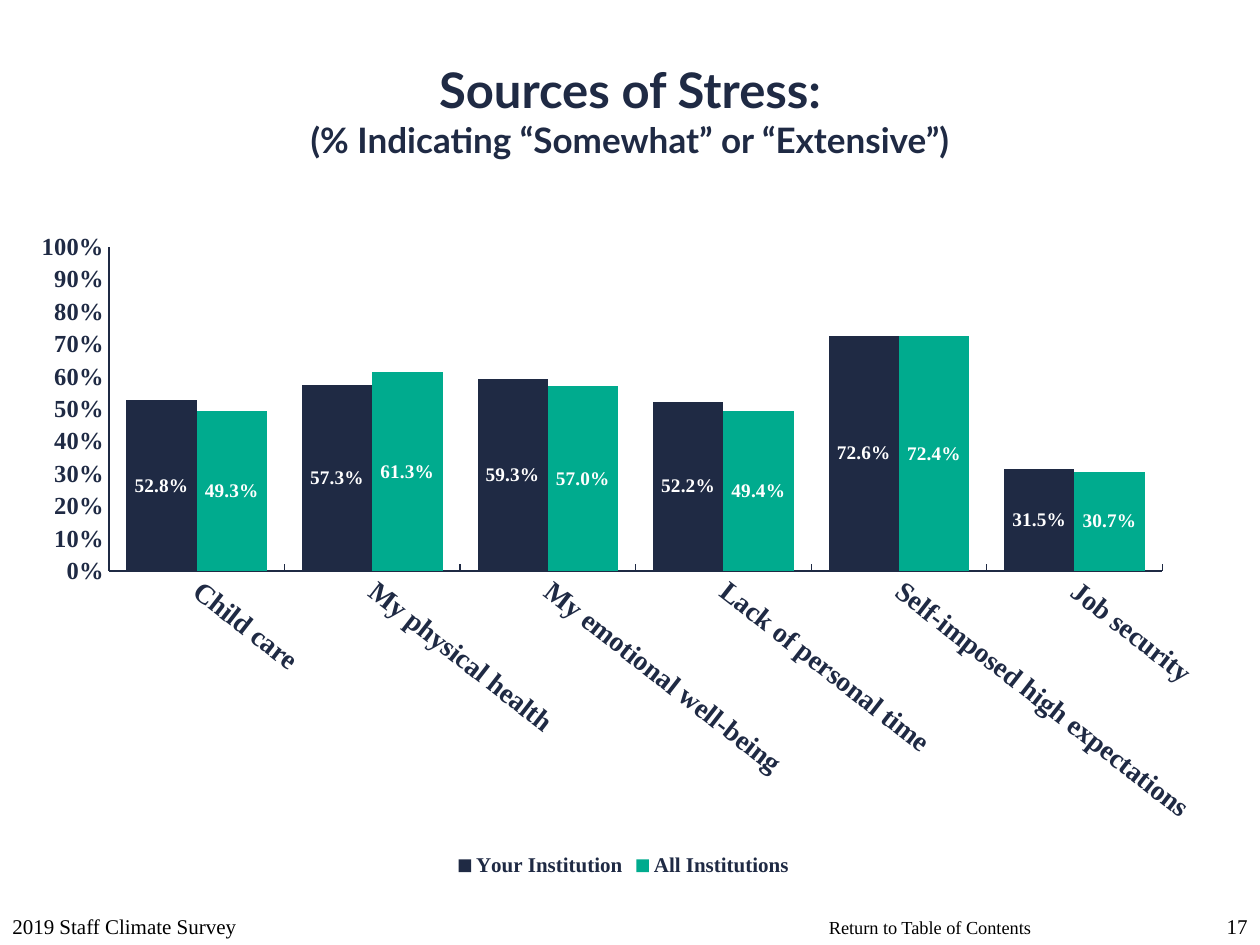
"""Build the slide on sources of stress, with a clustered column chart."""
from lxml import etree
from pptx import Presentation
from pptx import util as u
from pptx.chart.data import CategoryChartData
from pptx.dml.color import RGBColor
from pptx.enum import chart as ch, text
from pptx.oxml.ns import qn

hues = {"navy": "1F2A44", "green": "00AB8E", "white": "FFFFFF", "black": "000000"}
serif = "Times New Roman"


def style(font, size, hue, bold=True, name=serif):
    """Set the face, size and colour of a font."""
    for key, val in {"name": name, "size": u.Pt(size), "bold": bold}.items():
        setattr(font, key, val)
    font.color.rgb = RGBColor.from_string(hues[hue])


deck = Presentation()
deck.slide_width, deck.slide_height = u.Inches(10), u.Inches(7.5)
wide, high = deck.slide_width, deck.slide_height
slide = deck.slides.add_slide(deck.slide_layouts[5])

title = slide.shapes.title
place = {"left": 0, "top": high // 30, "width": wide, "height": high // 6}
for key, val in place.items():
    setattr(title, key, val)
title.text_frame.vertical_anchor = text.MSO_ANCHOR.MIDDLE
head = title.text_frame.paragraphs[0]
head.alignment = text.PP_ALIGN.CENTER
lines = [("Sources of Stress:", 28), ("(% Indicating “Somewhat” or “Extensive”)", 20)]
for i, (words, size) in enumerate(lines):
    if i:
        head.add_line_break()
    run = head.add_run()
    run.text = words
    style(run.font, size, "navy", name="Lato")

data = CategoryChartData()
data.categories = ["Child care", "My physical health", "My emotional well-being",
                   "Lack of personal time", "Self-imposed high expectations",
                   "Job security"]
groups = [
    ("Your Institution", "navy", (0.528, 0.573, 0.593, 0.522, 0.726, 0.315)),
    ("All Institutions", "green", (0.493, 0.613, 0.57, 0.494, 0.724, 0.307)),
]
for name, hue, vals in groups:
    data.add_series(name, vals, "0.0%")
chart = slide.shapes.add_chart(
    ch.XL_CHART_TYPE.COLUMN_CLUSTERED, int(wide * 0.02), int(high * 7 / 30),
    int(wide * 0.95), int(high * 0.7), data).chart
style(chart.font, 10, "navy")
chart.has_title = False
chart.has_legend = True
chart.legend.position = ch.XL_LEGEND_POSITION.BOTTOM
chart.legend.include_in_layout = False
style(chart.legend.font, 12, "navy")

plot = chart.plots[0]
for key, val in {"gap_width": 50, "overlap": 0, "vary_by_categories": False}.items():
    setattr(plot, key, val)
for bars, (name, hue, vals) in zip(plot.series, groups):
    bars.format.fill.solid()
    bars.format.fill.fore_color.rgb = RGBColor.from_string(hues[hue])
    tags = bars.data_labels
    form = {"show_value": True, "number_format": "0.0%",
            "number_format_is_linked": False,
            "position": ch.XL_LABEL_POSITION.CENTER}
    for key, val in form.items():
        setattr(tags, key, val)
    style(tags.font, 11, "white")

cats, scale = chart.category_axis, chart.value_axis
ticks = ch.XL_TICK_MARK
for axis, size, mark in [(cats, 16, ticks.INSIDE), (scale, 14, ticks.NONE)]:
    form = {"has_major_gridlines": False, "major_tick_mark": mark,
            "minor_tick_mark": ticks.NONE}
    for key, val in form.items():
        setattr(axis, key, val)
    style(axis.tick_labels.font, size, "navy")
    axis.format.line.width = u.Pt(0.75)
    axis.format.line.color.rgb = RGBColor.from_string(hues["navy"])
for key, val in {"minimum_scale": 0, "maximum_scale": 1, "major_unit": 0.1}.items():
    setattr(scale, key, val)
scale.tick_labels.number_format = "0%"
scale.tick_labels.number_format_is_linked = False
cats._element.find(qn("c:txPr")).find(qn("a:bodyPr")).set("rot", str(38 * 60000))

area = chart._chartSpace.chart.plotArea
for old in area.findall(qn("c:layout")):
    area.remove(old)
frame = etree.Element(qn("c:layout"))
area.insert(0, frame)
inner = etree.SubElement(frame, qn("c:manualLayout"))
rules = {"layoutTarget": "inner", "xMode": "edge", "yMode": "edge",
         "x": "0.07", "y": "0.04", "w": "0.88", "h": "0.49"}
for key, val in rules.items():
    etree.SubElement(inner, qn("c:" + key)).set("val", val)

sides, ends = text.PP_ALIGN, text.MSO_ANCHOR
notes = [
    ("Return to Table of Contents", 6.48, 7.22, 1.82, 0.28, 10.5, sides.LEFT, ends.TOP),
    ("2019 Staff Climate Survey", 0, 7, 3.17, 0.5, 12, sides.LEFT, ends.BOTTOM),
    ("17", 9.5, 7, 0.5, 0.5, 12, sides.RIGHT, ends.BOTTOM),
]
for words, x, y, w, h, size, side, end in notes:
    box = slide.shapes.add_textbox(*[u.Inches(n) for n in (x, y, w, h)]).text_frame
    box.word_wrap = end == ends.BOTTOM
    box.vertical_anchor = end
    para = box.paragraphs[0]
    para.alignment = side
    run = para.add_run()
    run.text = words
    style(run.font, size, "black", bold=False)

deck.save("out.pptx")
